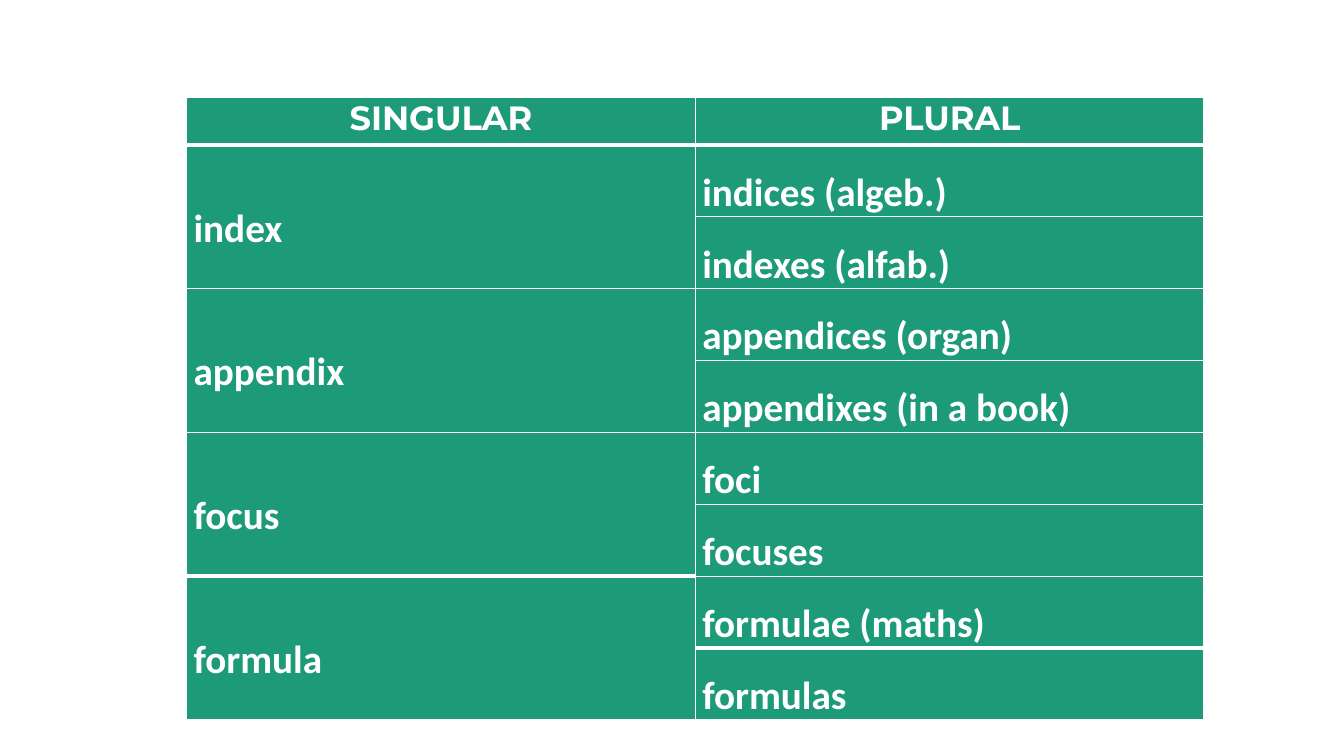
from lxml.etree import SubElement
from pptx import Presentation
from pptx.dml.color import RGBColor
from pptx.enum.text import MSO_ANCHOR, PP_ALIGN
from pptx.oxml.ns import qn
from pptx.util import Pt

GREEN = "1D9A78"
WHITE = "FFFFFF"
HEADINGS = ["SINGULAR", "PLURAL"]
NOUNS = {
    "index": ["indices (algeb.)", "indexes (alfab.)"],
    "appendix": ["appendices (organ)", "appendixes (in a book)"],
    "focus": ["foci", "focuses"],
    "formula": ["formulae (maths)", "formulas"],
}
HEAVY_TOPS = {(1, 0), (1, 1), (7, 0), (8, 1)}
HEADER_HEIGHT = 33.8
ROW_HEIGHT = 45.4


def color(value):
    return RGBColor.from_string(value)


def add_border(cell, side, width):
    line = SubElement(cell._tc.get_or_add_tcPr(), qn("a:ln" + side), w=str(Pt(width)))
    fill = SubElement(line, qn("a:solidFill"))
    SubElement(fill, qn("a:srgbClr"), val=WHITE)


deck = Presentation()
deck.slide_width = Pt(960)
deck.slide_height = Pt(540)
page = deck.slides.add_slide(deck.slide_layouts[6])

row_count = 1 + sum(len(plurals) for plurals in NOUNS.values())
table_height = HEADER_HEIGHT + ROW_HEIGHT * (row_count - 1)
table = page.shapes.add_table(
    row_count, 2, Pt(133.3), Pt(69.8), Pt(726.8), Pt(table_height)
).table
table.horz_banding = False
for column in table.columns:
    column.width = Pt(363.4)
for index, row in enumerate(table.rows):
    row.height = Pt(ROW_HEIGHT if index else HEADER_HEIGHT)

for column, heading in enumerate(HEADINGS):
    table.cell(0, column).text_frame.text = heading

first_row = 1
for singular, plurals in NOUNS.items():
    noun = table.cell(first_row, 0)
    noun.merge(table.cell(first_row + len(plurals) - 1, 0))
    noun.text_frame.text = singular
    noun.vertical_anchor = MSO_ANCHOR.MIDDLE
    for offset, plural in enumerate(plurals):
        table.cell(first_row + offset, 1).text_frame.text = plural
    first_row += len(plurals)

for row in range(row_count):
    for column in range(2):
        cell = table.cell(row, column)
        cell.margin_left = cell.margin_right = Pt(5)
        cell.margin_top = cell.margin_bottom = Pt(0)
        next_row = row + cell.span_height
        add_border(cell, "L", 1)
        add_border(cell, "R", 1)
        add_border(cell, "T", 3 if (row, column) in HEAVY_TOPS else 1)
        add_border(cell, "B", 3 if (next_row, column) in HEAVY_TOPS else 1)
        cell.fill.solid()
        cell.fill.fore_color.rgb = color(GREEN)

        para = cell.text_frame.paragraphs[0]
        if row == 0:
            para.alignment = PP_ALIGN.CENTER
        else:
            para.line_spacing = 1.5
        for span in para.runs:
            span.font.name = "Calibri" if row else "Montserrat"
            span.font.size = Pt(28 if row else 24)
            span.font.bold = True
            span.font.color.rgb = color(WHITE)

deck.save("out.pptx")
